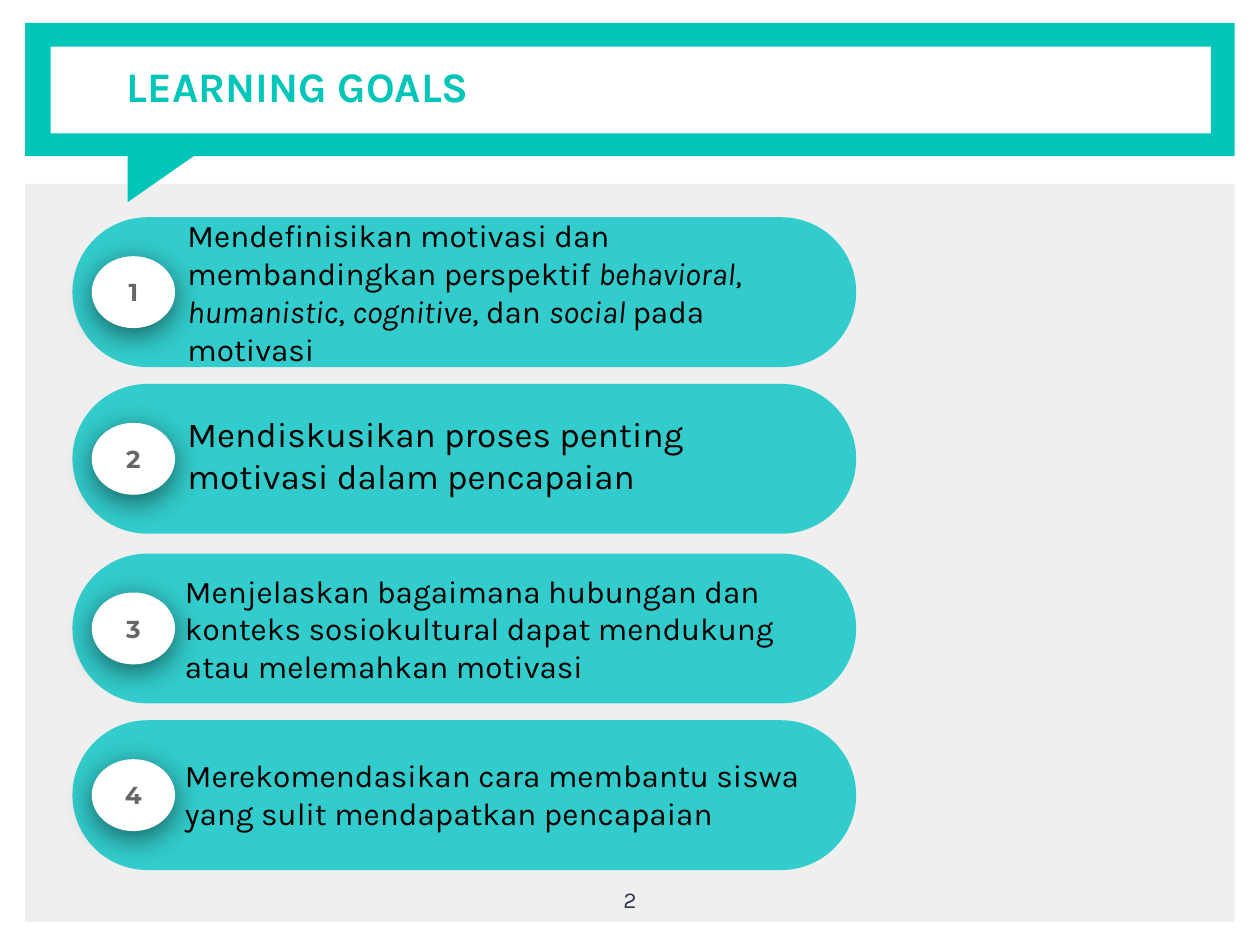
from dataclasses import dataclass

from lxml import etree
from pptx import Presentation
from pptx import util as u
from pptx.dml.color import RGBColor
from pptx.enum import shapes, text
from pptx.oxml import ns

TEAL, PILL, PANEL, WHITE = "00C5B9", "33CCCC", "EFEFEF", "FFFFFF"
PILL_CENTRE_X, PILL_THICKNESS, PILL_LENGTH = 9.36, 3.02, 15.8
BADGE_LEFT, BADGE_WIDTH, BADGE_HEIGHT = 1.85, 1.68, 1.45


@dataclass(frozen=True)
class Box:
    """Left, top, width and height in centimetres."""
    left: float
    top: float
    width: float
    height: float

    def lengths(self) -> list[u.Cm]:
        return [u.Cm(v) for v in (self.left, self.top, self.width, self.height)]


@dataclass(frozen=True)
class Style:
    size: float
    colour: str
    font: str = "Karla"
    bold: bool = False


@dataclass(frozen=True)
class Goal:
    centre_y: float
    text_box: Box
    size: float
    space_before: float
    runs: tuple[tuple[str, bool], ...]  # wording, italic


GOALS = (
    Goal(5.89, Box(3.53, 4.6, 13.34, 2.57), 18, 0, (
        ("Mendefinisikan motivasi dan membandingkan perspektif ", False),
        ("behavioral", True), (", ", False),
        ("humanistic", True), (", ", False),
        ("cognitive", True), (", dan ", False),
        ("social ", True), ("pada motivasi", False))),
    Goal(9.25, Box(3.53, 8.18, 11.84, 1.96), 20, 6, (
        ("Mendiskusikan proses penting motivasi dalam pencapaian", False),)),
    Goal(12.67, Box(3.48, 11.38, 13.39, 2.57), 18, 6, (
        ("Menjelaskan bagaimana hubungan dan konteks sosiokultural dapat "
         "mendukung atau melemahkan motivasi", False),)),
    Goal(16.03, Box(3.48, 15.11, 13.39, 1.8), 18, 6, (
        ("Merekomendasikan cara membantu siswa yang sulit mendapatkan "
         "pencapaian", False),)),
)


def rgb(colour: str) -> RGBColor:
    return RGBColor.from_string(colour)


def add_figure(slide, kind, box: Box, colour: str, rotation: float = 0):
    figure = slide.shapes.add_shape(kind, *box.lengths())
    figure.shadow.inherit = False
    figure.fill.solid()
    figure.fill.fore_color.rgb = rgb(colour)
    figure.line.fill.background()
    figure.rotation = rotation
    return figure


def add_soft_shadow(figure) -> None:
    effects = figure._element.spPr.find(ns.qn("a:effectLst"))
    shadow = etree.SubElement(
        effects, ns.qn("a:outerShdw"), blurRad=str(u.Pt(18)),
        dist=str(u.Pt(4)), dir="5400000", algn="t", rotWithShape="0")
    black = etree.SubElement(shadow, ns.qn("a:srgbClr"), val="000000")
    etree.SubElement(black, ns.qn("a:alpha"), val="55000")


def write(holder, runs: tuple[tuple[str, bool], ...], style: Style,
          align=text.PP_ALIGN.LEFT, anchor=text.MSO_ANCHOR.MIDDLE,
          inset_y: float = 0.25, space_before: float = 0) -> None:
    frame = holder.text_frame
    frame.word_wrap = True
    frame.vertical_anchor = anchor
    frame.margin_left = frame.margin_right = u.Cm(0.25)
    frame.margin_top = frame.margin_bottom = u.Cm(inset_y)
    paragraph = frame.paragraphs[0]
    paragraph.alignment = align
    paragraph.space_before = u.Pt(space_before)
    for wording, italic in runs:
        run = paragraph.add_run()
        run.text = wording
        run.font.name = style.font
        run.font.size = u.Pt(style.size)
        run.font.bold = style.bold
        run.font.italic = italic
        run.font.color.rgb = rgb(style.colour)


def add_header(slide) -> None:
    kinds = shapes.MSO_SHAPE
    add_figure(slide, kinds.RECTANGLE, Box(0.51, 3.71, 24.38, 14.88), PANEL)
    add_figure(slide, kinds.RECTANGLE, Box(0.51, 0.46, 24.38, 2.69), TEAL)
    add_figure(slide, kinds.RIGHT_TRIANGLE, Box(2.84, 2.59, 1.22, 1.75), TEAL, 90)
    add_figure(slide, kinds.RECTANGLE, Box(1.02, 0.94, 23.39, 1.75), WHITE)
    title = slide.shapes.add_textbox(*Box(2.31, 0.38, 22.1, 2.69).lengths())
    write(title, (("LEARNING GOALS", False),), Style(24, TEAL, bold=True))


def add_goal(slide, number: int, goal: Goal) -> None:
    # The pill is an upright shape turned on its side
    pill = add_figure(
        slide, shapes.MSO_SHAPE.ROUNDED_RECTANGLE,
        Box(PILL_CENTRE_X - PILL_THICKNESS / 2, goal.centre_y - PILL_LENGTH / 2,
            PILL_THICKNESS, PILL_LENGTH), PILL, 90)
    pill.adjustments[0] = 0.5

    badge = add_figure(
        slide, shapes.MSO_SHAPE.OVAL,
        Box(BADGE_LEFT, goal.centre_y - BADGE_HEIGHT / 2,
            BADGE_WIDTH, BADGE_HEIGHT), WHITE)
    add_soft_shadow(badge)
    write(badge, ((str(number), False),),
          Style(14, "666666", "Montserrat", True), text.PP_ALIGN.CENTER)

    wording = slide.shapes.add_textbox(*goal.text_box.lengths())
    write(wording, goal.runs, Style(goal.size, "000000"), inset_y=0.13,
          space_before=goal.space_before)
    wording.text_frame.auto_size = text.MSO_AUTO_SIZE.SHAPE_TO_FIT_TEXT


def main() -> None:
    deck = Presentation()
    deck.slide_width, deck.slide_height = u.Cm(25.4), u.Cm(19.05)
    slide = deck.slides.add_slide(deck.slide_layouts[6])

    # Panel, speech-bubble header and title
    add_header(slide)

    # Page number
    page_number = slide.shapes.add_textbox(*Box(11.94, 17.6, 1.52, 1.45).lengths())
    write(page_number, (("2", False),), Style(13, "2F3848"),
          text.PP_ALIGN.CENTER, text.MSO_ANCHOR.TOP)

    # Numbered goals
    for number, goal in enumerate(GOALS, start=1):
        add_goal(slide, number, goal)

    deck.save("out.pptx")


if __name__ == "__main__":
    main()
